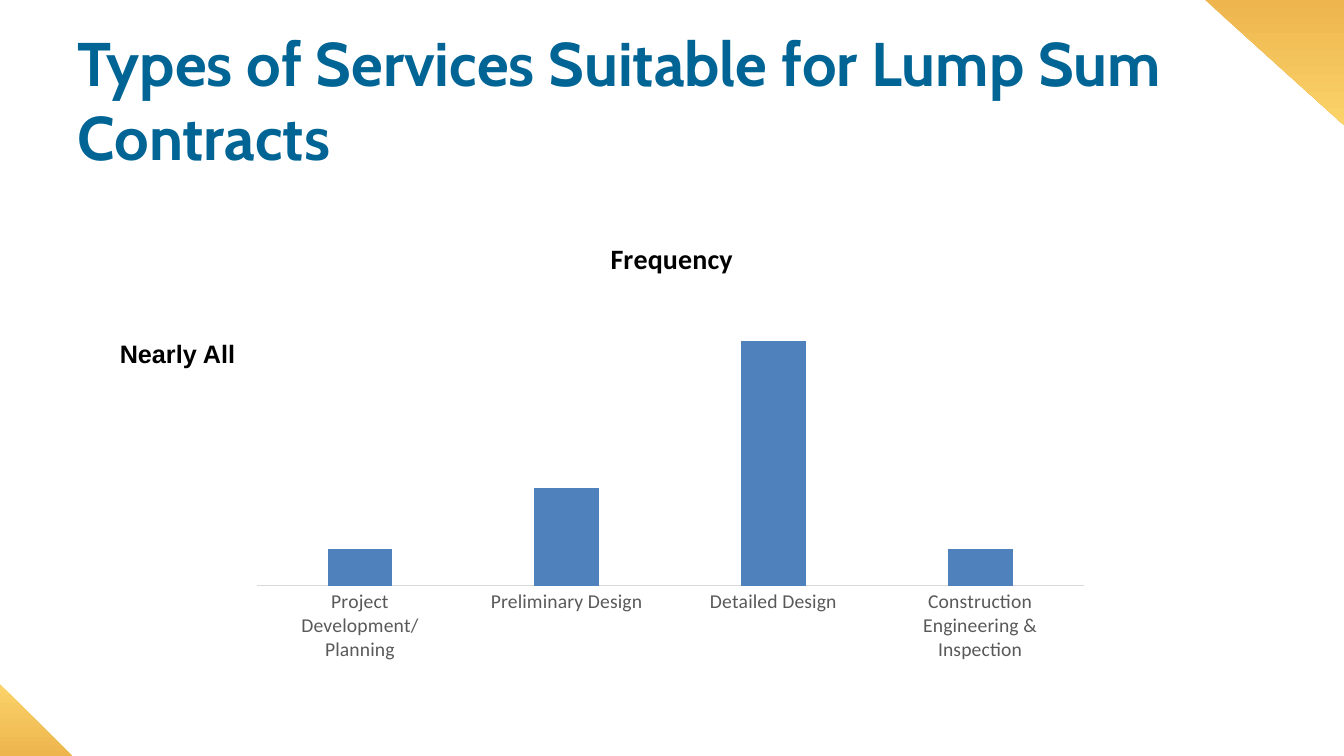
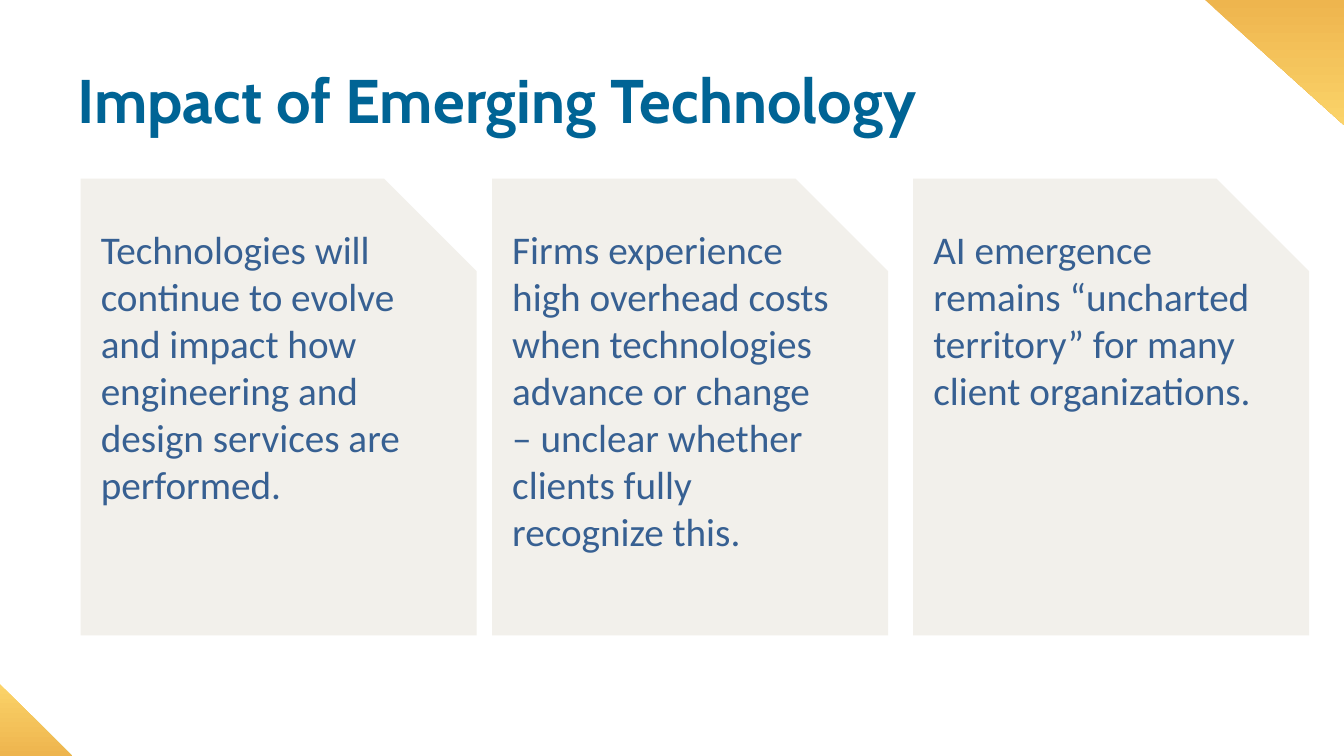
import pptx
import pptx.chart.data
import pptx.dml.color
import pptx.enum.chart
import pptx.enum.shapes
import pptx.enum.text
import pptx.oxml
import pptx.oxml.ns
import pptx.util

Cm = pptx.util.Cm
Pt = pptx.util.Pt
RGBColor = pptx.dml.color.RGBColor

BLUE = RGBColor(0x00, 0x64, 0x95)
CARD_TEXT = RGBColor(0x37, 0x60, 0x92)
CARD_FILL = RGBColor(0xF2, 0xF0, 0xEB)
BAR = RGBColor(0x4F, 0x81, 0xBD)
BLACK = RGBColor(0, 0, 0)
GREY = RGBColor(0x59, 0x59, 0x59)
AXIS = RGBColor(0xD9, 0xD9, 0xD9)
LIGHT_GOLD = RGBColor(0xFB, 0xD3, 0x69)
DARK_GOLD = RGBColor(0xEE, 0xB5, 0x4E)

WIDTH, HEIGHT = 33.87, 19.05
CORNERS = [
    ([(WIDTH, 3.15), (WIDTH, 0), (30.37, 0)], (DARK_GOLD, LIGHT_GOLD)),
    ([(0, 17.24), (0, HEIGHT), (1.82, HEIGHT)], (LIGHT_GOLD, DARK_GOLD)),
]

CHART_SLIDE = "Types of Services Suitable for Lump Sum Contracts"
CHART_TITLE = "Frequency"
TOP_LABEL = "Nearly All"
SERVICES = {
    "Project Development/Planning": 15,
    "Preliminary Design": 40,
    "Detailed Design": 100,
    "Construction Engineering & Inspection": 15,
}
PLOT = {"x": 0.016, "y": 0.163, "w": 0.964, "h": 0.664}

CARD_SLIDE = "Impact of Emerging Technology"
CARDS = [
    (2.03, "Technologies will continue to evolve and impact how engineering "
           "and design services are performed."),
    (12.4, "Firms experience high overhead costs when technologies advance "
           "or change – unclear whether clients fully recognize this."),
    (23.01, "AI emergence remains “uncharted territory” for many client "
            "organizations."),
]


def set_font(font, size, color, name="Calibri", bold=False):
    font.size = Pt(size)
    font.color.rgb = color
    font.name = name
    font.bold = bold


def prepare_layout(layout):
    title = layout.placeholders[0]
    title.left, title.top = Cm(1.7), Cm(1.02)
    title.width, title.height = Cm(30.5), Cm(2.92)
    title.text_frame.auto_size = pptx.enum.text.MSO_AUTO_SIZE.NONE
    title.text_frame.vertical_anchor = pptx.enum.text.MSO_ANCHOR.MIDDLE


def add_corners(slide, layout):
    for number, (points, colors) in enumerate(CORNERS):
        start, *rest = [(Cm(x), Cm(y)) for x, y in points]
        builder = slide.shapes.build_freeform(*start)
        builder.add_line_segments(rest, close=True)
        sp = builder.convert_to_shape()
        sp.shadow.inherit = False
        sp.line.fill.background()
        sp.fill.gradient()
        sp.fill.gradient_angle = 270
        for stop, color in zip(sp.fill.gradient_stops, colors):
            stop.color.rgb = color
        sp.element.xpath(".//p:cNvPr")[0].set("id", str(20 + number))
        layout.shapes.element.insert(2 + number, sp.element)


def new_slide(prs, layout, title):
    slide = prs.slides.add_slide(layout)
    slide.shapes.title.text = title
    p = slide.shapes.title.text_frame.paragraphs[0]
    p.alignment = pptx.enum.text.PP_ALIGN.LEFT
    set_font(p.font, 44, BLUE, "Cabin", True)
    return slide


def place_plot(chart):
    old = chart.element.xpath("c:chart/c:plotArea/c:layout")
    for element in old:
        element.getparent().remove(element)
    modes = "".join(f'<c:{k}Mode val="edge"/>' for k in "xy")
    sizes = "".join(f'<c:{k} val="{v}"/>' for k, v in PLOT.items())
    layout = pptx.oxml.parse_xml(
        f'<c:layout {pptx.oxml.ns.nsdecls("c")}><c:manualLayout>'
        f'<c:layoutTarget val="inner"/>{modes}{sizes}'
        '</c:manualLayout></c:layout>')
    chart.element.xpath("c:chart/c:plotArea")[0].insert(0, layout)


def add_frequency_chart(slide):
    data = pptx.chart.data.CategoryChartData()
    data.categories = list(SERVICES)
    data.add_series("Series 1", list(SERVICES.values()))
    chart = slide.shapes.add_chart(
        pptx.enum.chart.XL_CHART_TYPE.COLUMN_CLUSTERED,
        Cm(6.12), Cm(5.54), Cm(21.62), Cm(11.15), data).chart
    set_font(chart.font, 14, BLACK)
    chart.has_legend = False
    chart.has_title = True
    chart.chart_title.include_in_layout = False
    tf = chart.chart_title.text_frame
    tf.text = CHART_TITLE
    set_font(tf.paragraphs[0].font, 20, BLACK, bold=True)

    plot = chart.plots[0]
    plot.gap_width, plot.overlap = 219, -27
    plot.vary_by_categories = False
    fill = plot.series[0].format.fill
    fill.solid()
    fill.fore_color.rgb = BAR

    values = chart.value_axis
    values.minimum_scale, values.maximum_scale = 0, 120
    values.has_major_gridlines = False
    values.visible = False
    categories = chart.category_axis
    categories.major_tick_mark = pptx.enum.chart.XL_TICK_MARK.NONE
    categories.format.line.color.rgb = AXIS
    categories.format.line.width = Pt(0.75)
    set_font(categories.tick_labels.font, 14, GREY)
    place_plot(chart)


def add_top_label(slide):
    tf = slide.shapes.add_textbox(
        Cm(2.77), Cm(8.41), Cm(3.71), Cm(1.02)).text_frame
    tf.word_wrap = True
    tf.text = TOP_LABEL
    set_font(tf.paragraphs[0].font, 18, BLACK, "Arial", True)


def add_card(slide, left, text):
    sp = slide.shapes.add_shape(
        pptx.enum.shapes.MSO_SHAPE.SNIP_1_RECTANGLE,
        Cm(left), Cm(4.5), Cm(9.98), Cm(11.51))
    sp.adjustments[0] = 0.234
    sp.shadow.inherit = False
    sp.fill.solid()
    sp.fill.fore_color.rgb = CARD_FILL
    sp.line.fill.background()
    tf = sp.text_frame
    tf.word_wrap = True
    tf.vertical_anchor = pptx.enum.text.MSO_ANCHOR.TOP
    tf.margin_left, tf.margin_top = Cm(0.51), 0
    tf.margin_right, tf.margin_bottom = Cm(0.25), Cm(0.13)
    tf.text = text
    p = tf.paragraphs[0]
    p.alignment = pptx.enum.text.PP_ALIGN.LEFT
    set_font(p.font, 28, CARD_TEXT)


def main():
    prs = pptx.Presentation()
    prs.slide_width, prs.slide_height = Cm(WIDTH), Cm(HEIGHT)
    layout = prs.slide_layouts.get_by_name("Title Only")
    prepare_layout(layout)

    slide = new_slide(prs, layout, CHART_SLIDE)
    add_corners(slide, layout)
    add_frequency_chart(slide)
    add_top_label(slide)

    slide = new_slide(prs, layout, CARD_SLIDE)
    for left, text in CARDS:
        add_card(slide, left, text)

    prs.save("out.pptx")


if __name__ == "__main__":
    main()
